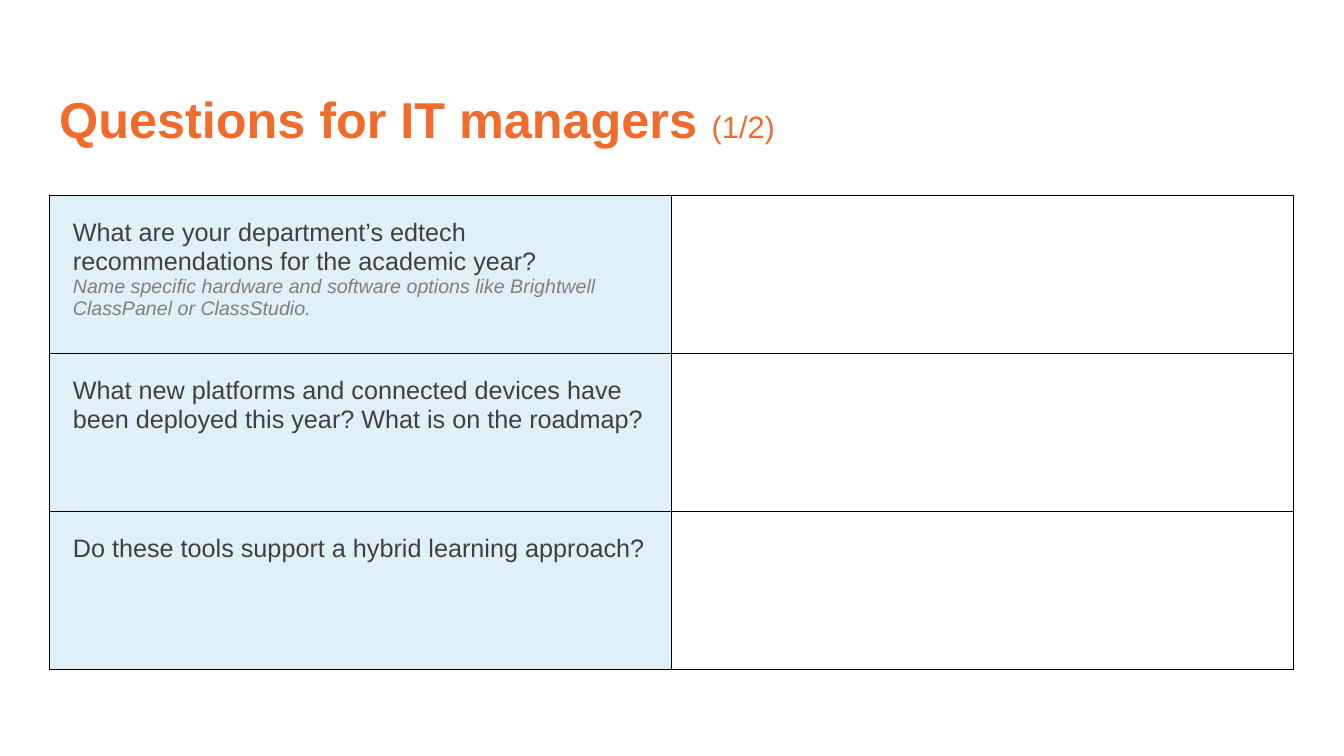
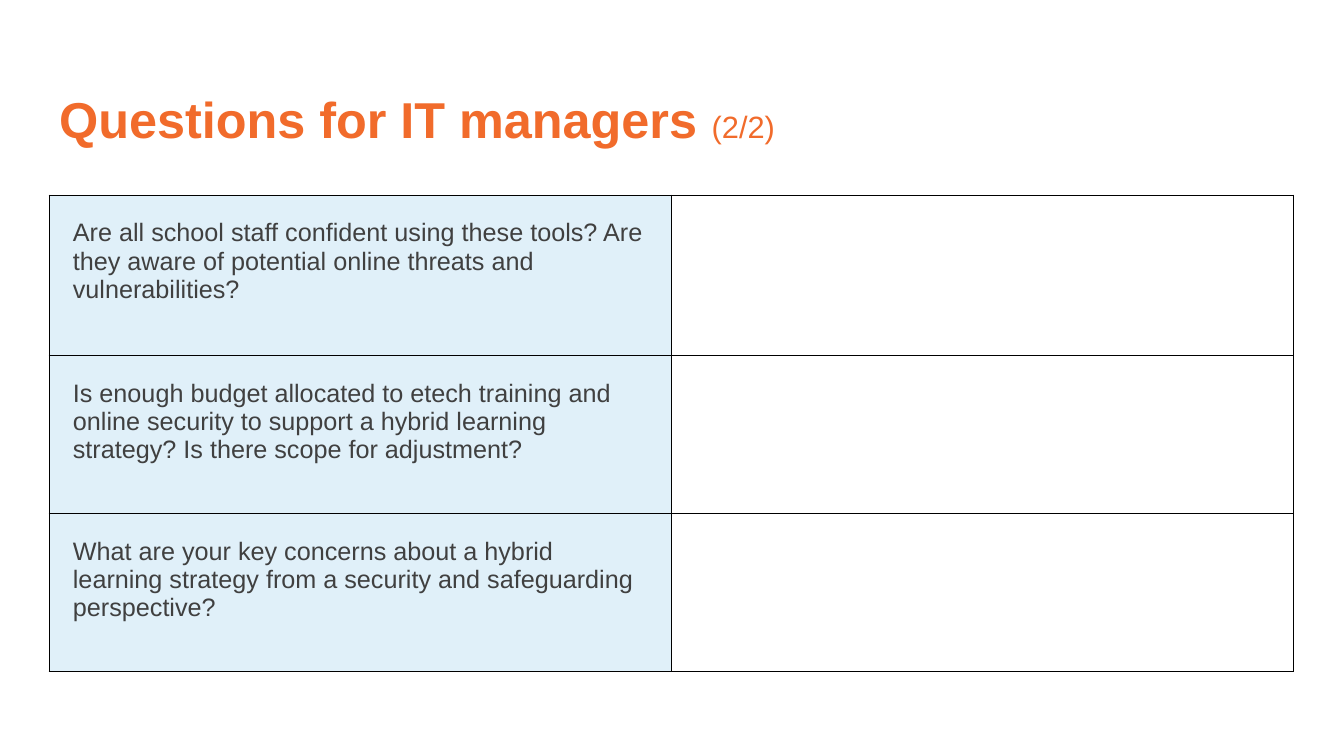
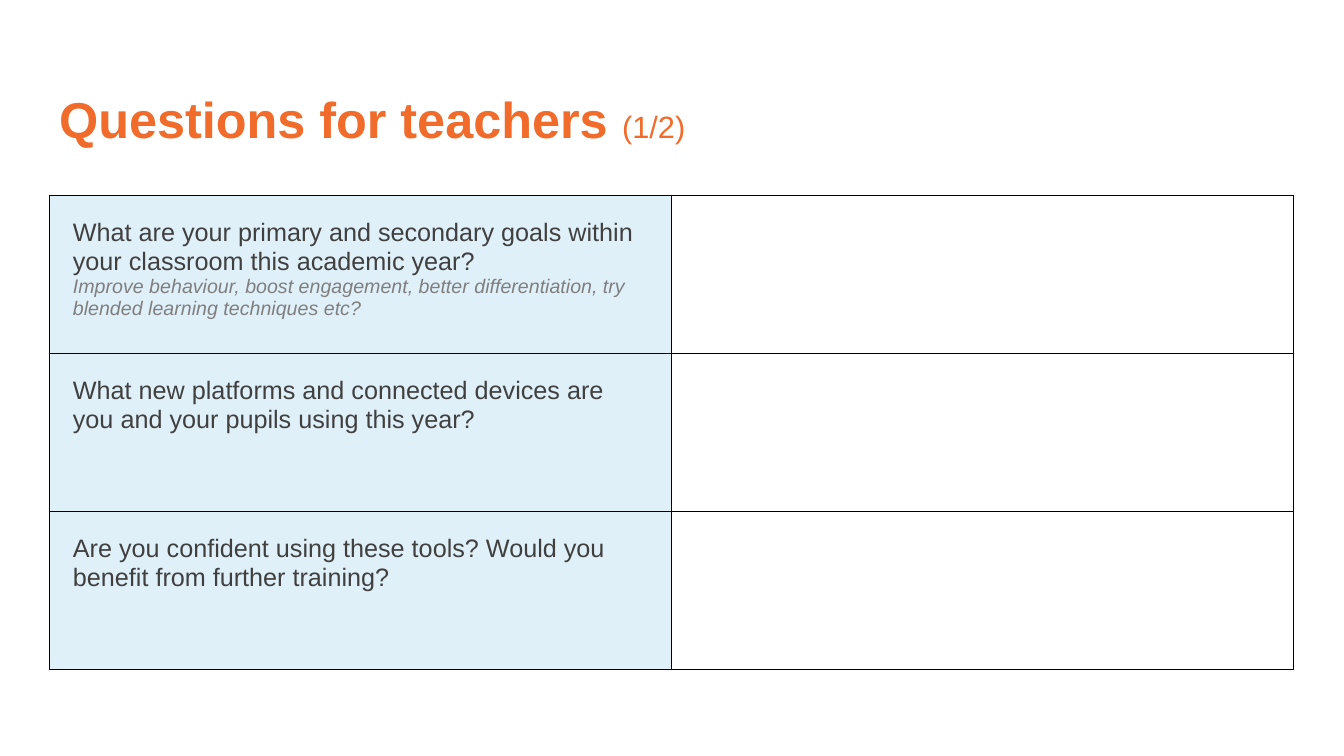
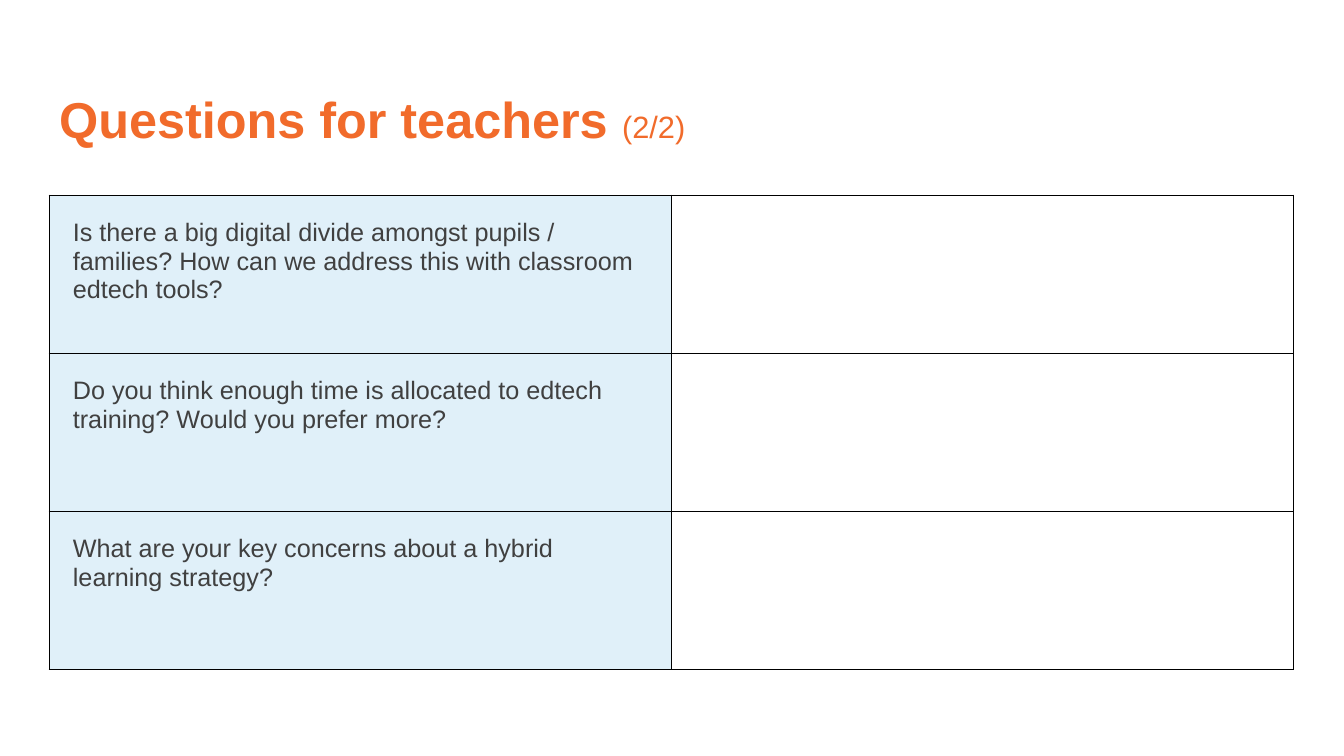
from dataclasses import dataclass

from lxml import etree
from pptx import Presentation
from pptx.dml import color
from pptx.enum import text
from pptx.oxml import ns
from pptx.slide import Slide
from pptx.table import _Cell
from pptx.util import Pt

INK = {
    "title": "F16B2B",
    "body": "404040",
    "hint": "7F7F7F",
    "ask": "E0F0F9",
    "reply": "FFFFFF",
    "rule": "000000",
}
FONT = "Arial"
LEFT = 35.1
TOP = 139.4
COL = 444.5
ROW = 112.9
PAD = 17


@dataclass
class Query:
    text: str
    hint: str = ""
    height: float = ROW


@dataclass
class Page:
    title: str
    count: str
    rows: list[Query]


PAGES = [
    Page("Questions for IT managers", "(1/2)", [
        Query("What are your department’s edtech recommendations for the academic year?",
              "Name specific hardware and software options like Brightwell "
              "ClassPanel or ClassStudio."),
        Query("What new platforms and connected devices have been deployed this year? "
              "What is on the roadmap?"),
        Query("Do these tools support a hybrid learning approach?"),
    ]),
    Page("Questions for IT managers", "(2/2)", [
        Query("Are all school staff confident using these tools? Are they aware of "
              "potential online threats and vulnerabilities?", height=114.5),
        Query("Is enough budget allocated to etech training and online security to "
              "support a hybrid learning strategy? Is there scope for adjustment?"),
        Query("What are your key concerns about a hybrid learning strategy from a "
              "security and safeguarding perspective?"),
    ]),
    Page("Questions for teachers", "(1/2)", [
        Query("What are your primary and secondary goals within your classroom this "
              "academic year?",
              "Improve behaviour, boost engagement, better differentiation, try "
              "blended learning techniques etc?"),
        Query("What new platforms and connected devices are you and your pupils using "
              "this year?"),
        Query("Are you confident using these tools? Would you benefit from further "
              "training?"),
    ]),
    Page("Questions for teachers", "(2/2)", [
        Query("Is there a big digital divide amongst pupils / families? How can we "
              "address this with classroom edtech tools?"),
        Query("Do you think enough time is allocated to edtech training? Would you "
              "prefer more?"),
        Query("What are your key concerns about a hybrid learning strategy?"),
    ]),
]


def tint(name: str) -> color.RGBColor:
    return color.RGBColor.from_string(INK[name])


def add_title(slide: Slide, page: Page) -> None:
    box = slide.shapes.title
    box.left, box.top = Pt(LEFT), Pt(35)
    box.width, box.height = Pt(828), Pt(104.4)
    frame = box.text_frame
    frame.word_wrap = True
    frame.auto_size = text.MSO_AUTO_SIZE.NONE
    frame.vertical_anchor = text.MSO_ANCHOR.MIDDLE
    para = frame.paragraphs[0]
    para.alignment = text.PP_ALIGN.LEFT
    para.line_spacing = 0.9
    para.font.name = FONT
    para.font.color.rgb = tint("title")
    for words, size, bold in ((page.title + " ", 36, True), (page.count, 22, False)):
        run = para.add_run()
        run.text = words
        run.font.size = Pt(size)
        run.font.bold = bold


def style_cell(cell: _Cell, fill: str) -> None:
    cell.fill.solid()
    cell.fill.fore_color.rgb = tint(fill)
    props = cell._tc.get_or_add_tcPr()
    for spot, side in enumerate(("lnL", "lnR", "lnT", "lnB")):
        line = etree.Element(ns.qn(f"a:{side}"), w=str(Pt(0.75)))
        solid = etree.SubElement(line, ns.qn("a:solidFill"))
        etree.SubElement(solid, ns.qn("a:srgbClr"), val=INK["rule"])
        props.insert(spot, line)


def write_query(cell: _Cell, query: Query) -> None:
    cell.margin_left = cell.margin_right = Pt(PAD)
    cell.margin_top = cell.margin_bottom = Pt(PAD)
    para = cell.text_frame.paragraphs[0]
    para.font.name = FONT
    para.font.size = Pt(18)
    para.font.color.rgb = tint("body")
    para.add_run().text = query.text
    if query.hint:
        para.add_line_break()
        run = para.add_run()
        run.text = query.hint
        run.font.size = Pt(14)
        run.font.italic = True
        run.font.color.rgb = tint("hint")


def add_grid(slide: Slide, rows: list[Query]) -> None:
    high = sum(query.height for query in rows)
    grid = slide.shapes.add_table(
        len(rows), 2, Pt(LEFT), Pt(TOP), Pt(2 * COL), Pt(high)).table
    grid.first_row = grid.horz_banding = False
    for col in grid.columns:
        col.width = Pt(COL)
    for row, query in zip(grid.rows, rows):
        row.height = Pt(query.height)
        ask, reply = row.cells
        style_cell(ask, "ask")
        style_cell(reply, "reply")
        write_query(ask, query)


def main() -> None:
    deck = Presentation()
    deck.slide_width, deck.slide_height = Pt(960), Pt(540)
    for page in PAGES:
        slide = deck.slides.add_slide(deck.slide_layouts[5])
        add_title(slide, page)
        add_grid(slide, page.rows)
    deck.save("out.pptx")


if __name__ == "__main__":
    main()
